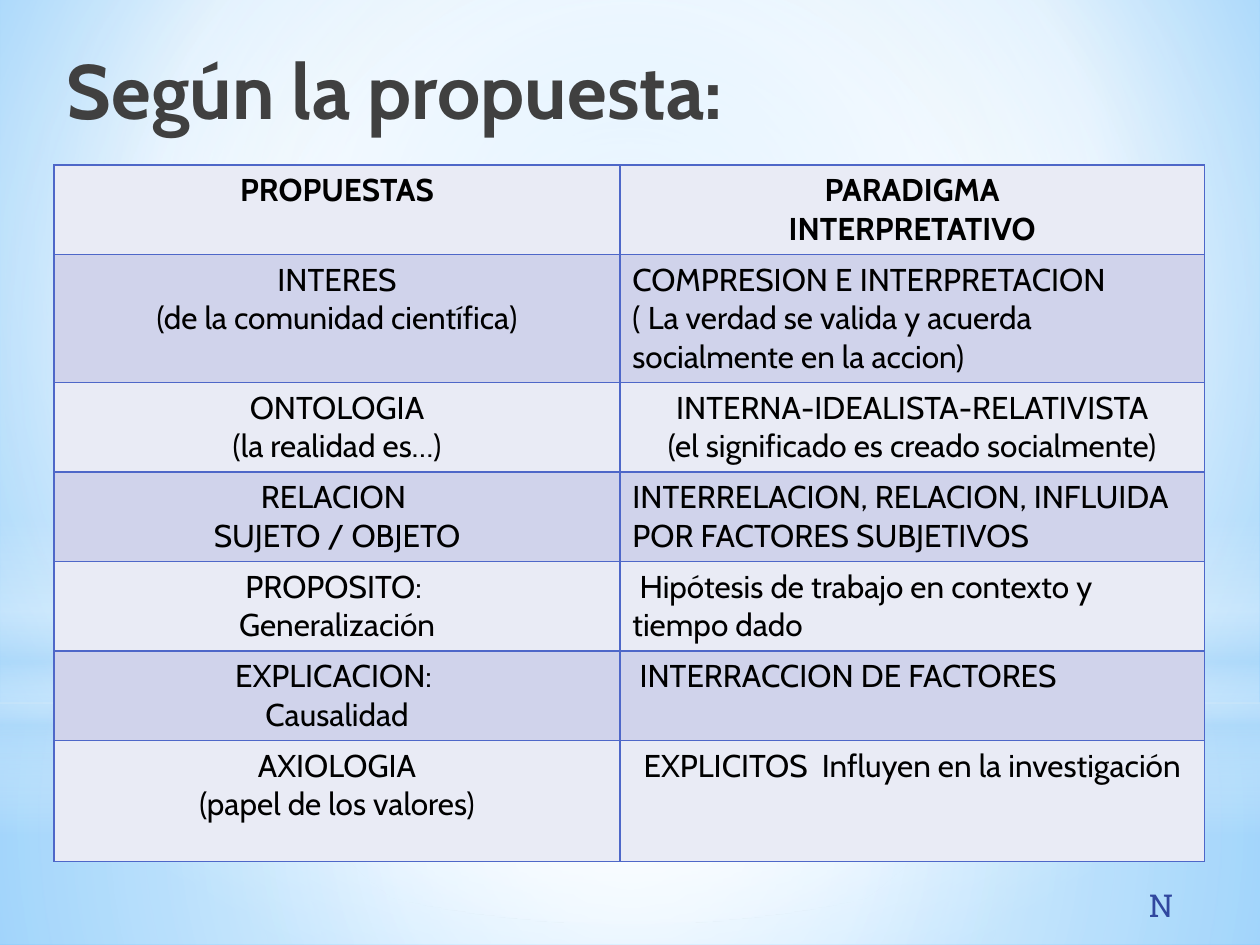
from pptx import Presentation
from pptx.dml.color import RGBColor
from pptx.enum.shapes import MSO_SHAPE
from pptx.enum.text import MSO_ANCHOR, PP_ALIGN
from pptx.oxml import parse_xml
from pptx.oxml.ns import nsdecls, qn
from pptx.util import Inches, Pt

RECT, OVAL = MSO_SHAPE.RECTANGLE, MSO_SHAPE.OVAL
LEFT, CENTER = PP_ALIGN.LEFT, PP_ALIGN.CENTER
TOP = MSO_ANCHOR.TOP

THEME = {
    "font": "Cabin", "mark_font": "Roboto Slab",
    "title_size": Pt(44), "text_size": Pt(18), "border": Pt(1),
    "title": "404040", "text": "000000", "mark": "31489F", "line": "4E67C8",
    "bands": ("E9EBF5", "D0D3EB"),
    "sky": "9ED5FF", "deep_sky": "5BB9FF", "white": "FFFFFF", "haze": "B4DCFA",
}
WHITE, HAZE = THEME["white"], THEME["haze"]
MIDDLE = (50, 50, 50, 50)


def set_gradient(fill, properties, stops, center=None):
    """Stops are (position, colour, opacity) in percent; no center means top to bottom."""
    fill.gradient()
    stop_xml = "".join(
        f'<a:gs pos="{pos * 1000}"><a:srgbClr val="{color}">'
        f'<a:alpha val="{opacity * 1000}"/></a:srgbClr></a:gs>'
        for pos, color, opacity in stops)
    if center:
        l, t, r, b = (share * 1000 for share in center)
        course = (f'<a:path path="circle"><a:fillToRect l="{l}" t="{t}" '
                  f'r="{r}" b="{b}"/></a:path>')
    else:
        course = '<a:lin ang="5400000" scaled="0"/>'
    properties.replace(properties.find(qn("a:gradFill")), parse_xml(
        f'<a:gradFill rotWithShape="1" {nsdecls("a")}>'
        f'<a:gsLst>{stop_xml}</a:gsLst>{course}</a:gradFill>'))


def add_run(paragraph, words, size, color, font=THEME["font"], bold=False):
    run = paragraph.add_run()
    run.text = words
    run.font.name, run.font.size, run.font.bold = font, size, bold
    run.font.color.rgb = RGBColor.from_string(color)


prs = Presentation()
prs.slide_width, prs.slide_height = Inches(10), Inches(7.5)
W, H = prs.slide_width, prs.slide_height
slide = prs.slides.add_slide(prs.slide_layouts[5])

# Sky background: horizon at 5.58 of 7.5, with soft light over it
set_gradient(slide.background.fill, slide.element.find(".//" + qn("p:bgPr")),
             [(0, THEME["sky"], 100), (60, WHITE, 100), (100, THEME["deep_sky"], 100)],
             (20, 10, 20, 60))
horizon = 0.744
sky_layers = [
    (RECT, horizon, 1 - horizon,
     [(0, WHITE, 91), (37, WHITE, 76), (100, HAZE, 79)], MIDDLE),
    (RECT, 0, horizon,
     [(0, WHITE, 89), (48, WHITE, 62), (100, HAZE, 79)], MIDDLE),
    (RECT, 0.55, 1 / 3,
     [(0, WHITE, 0), (29, WHITE, 30), (45, HAZE, 40), (55, WHITE, 26),
      (65, HAZE, 60), (100, WHITE, 0)], None),
    (OVAL, 0.233, horizon, [(0, WHITE, 100), (56, WHITE, 0)], MIDDLE),
]
for outline, top, height, stops, center in sky_layers:
    layer = slide.shapes.add_shape(outline, 0, int(top * H), W, int(height * H))
    layer.shadow.inherit = False
    layer.line.fill.background()
    set_gradient(layer.fill, layer.element.spPr, stops, center)

# Title, brought in front of the sky
margin = Inches(0.43)
title = slide.shapes.title
slide.shapes.element.append(title.element)
title.left, title.top, title.width, title.height = (
    margin, Inches(0.29), Inches(7.12), Inches(1.25))
title.text_frame.vertical_anchor = TOP
heading = title.text_frame.paragraphs[0]
heading.alignment = LEFT
add_run(heading, "Según la propuesta:", THEME["title_size"], THEME["title"], bold=True)

# Proposal against paradigm: left cell, right cell, alignment of the right cell
proposals = [
    (["PROPUESTAS"], ["PARADIGMA", "INTERPRETATIVO"], CENTER),
    (["INTERES", "(de la comunidad científica)"],
     ["COMPRESION E INTERPRETACION",
      "( La verdad se valida y acuerda socialmente en la accion)"], LEFT),
    (["ONTOLOGIA", "(la realidad es…)"],
     ["INTERNA-IDEALISTA-RELATIVISTA", "(el significado es creado socialmente)"], CENTER),
    (["RELACION ", "SUJETO / OBJETO"],
     ["INTERRELACION, RELACION, INFLUIDA POR FACTORES SUBJETIVOS"], LEFT),
    (["PROPOSITO: ", "Generalización"],
     [" Hipótesis de trabajo en contexto y tiempo dado"], LEFT),
    (["EXPLICACION: ", "Causalidad"], [" INTERRACCION DE FACTORES"], LEFT),
    (["AXIOLOGIA", "(papel de los valores)"],
     ["EXPLICITOS  Influyen en la investigación"], CENTER),
]
column_widths = (Inches(4.49), Inches(4.64))
tall_rows = (1, len(proposals) - 1)
row_heights = [Inches(0.96 if i in tall_rows else 0.69) for i in range(len(proposals))]
table = slide.shapes.add_table(len(proposals), 2, margin, Inches(1.31),
                               sum(column_widths), sum(row_heights)).table
for column, width in zip(table.columns, column_widths):
    column.width = width
for i, (proposal, paradigm, paradigm_align) in enumerate(proposals):
    table.rows[i].height = row_heights[i]
    for j, (lines, align) in enumerate([(proposal, CENTER), (paradigm, paradigm_align)]):
        cell = table.cell(i, j)
        for k, words in enumerate(lines):
            frame = cell.text_frame
            paragraph = frame.add_paragraph() if k else frame.paragraphs[0]
            paragraph.alignment = align
            add_run(paragraph, words, THEME["text_size"], THEME["text"], bold=i == 0)
        cell_properties = cell._tc.get_or_add_tcPr()
        for side in ("lnL", "lnR", "lnT", "lnB"):
            cell_properties.append(parse_xml(
                f'<a:{side} w="{THEME["border"]}" {nsdecls("a")}><a:solidFill>'
                f'<a:srgbClr val="{THEME["line"]}"/></a:solidFill></a:{side}>'))
        cell.fill.solid()
        cell.fill.fore_color.rgb = RGBColor.from_string(THEME["bands"][i % 2])

# Corner mark
mark = slide.shapes.add_textbox(Inches(9.02), Inches(6.98), Inches(0.55), Inches(0.4))
mark.text_frame.word_wrap = True
add_run(mark.text_frame.paragraphs[0], "N", THEME["text_size"], THEME["mark"],
        THEME["mark_font"])

prs.save("out.pptx")
